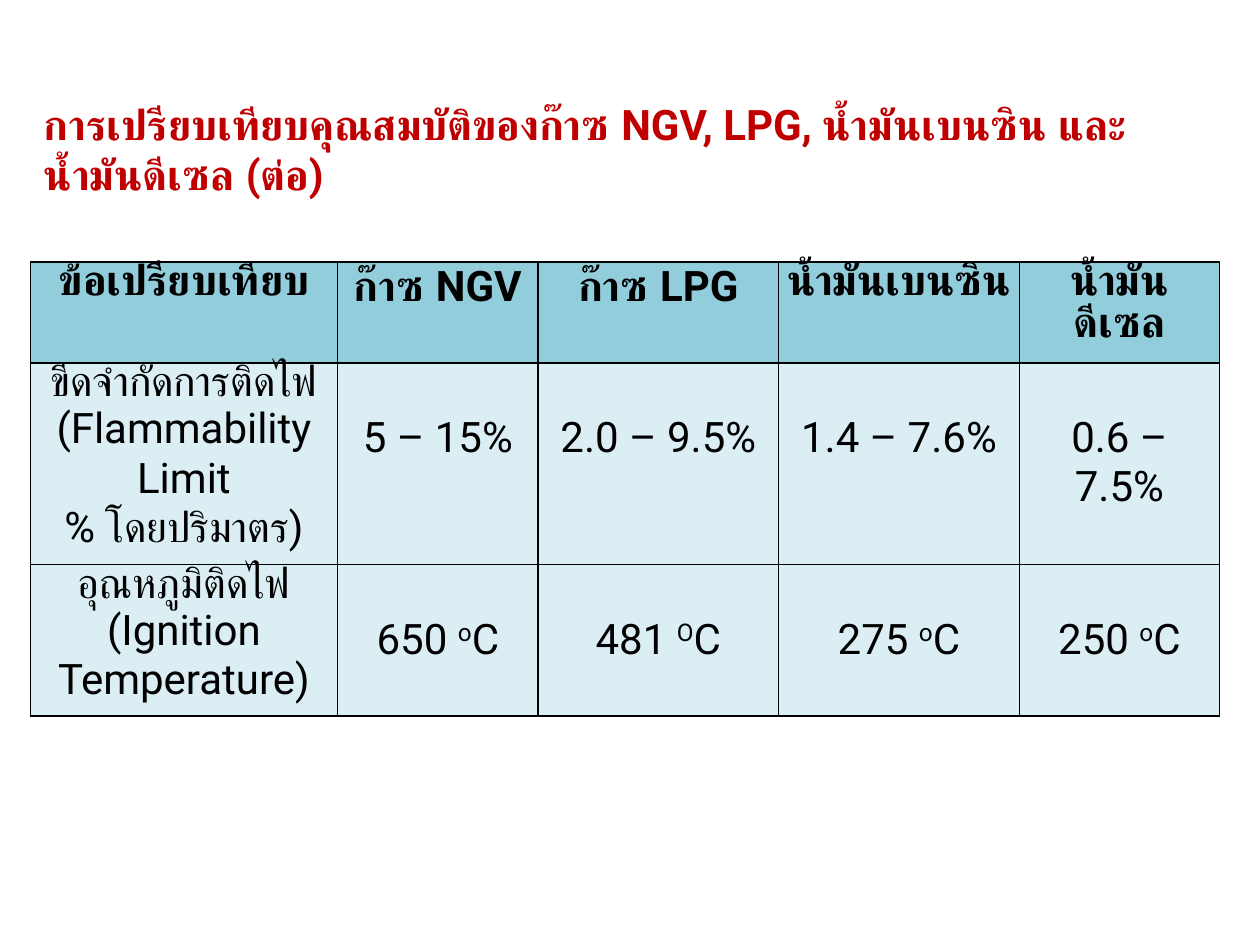
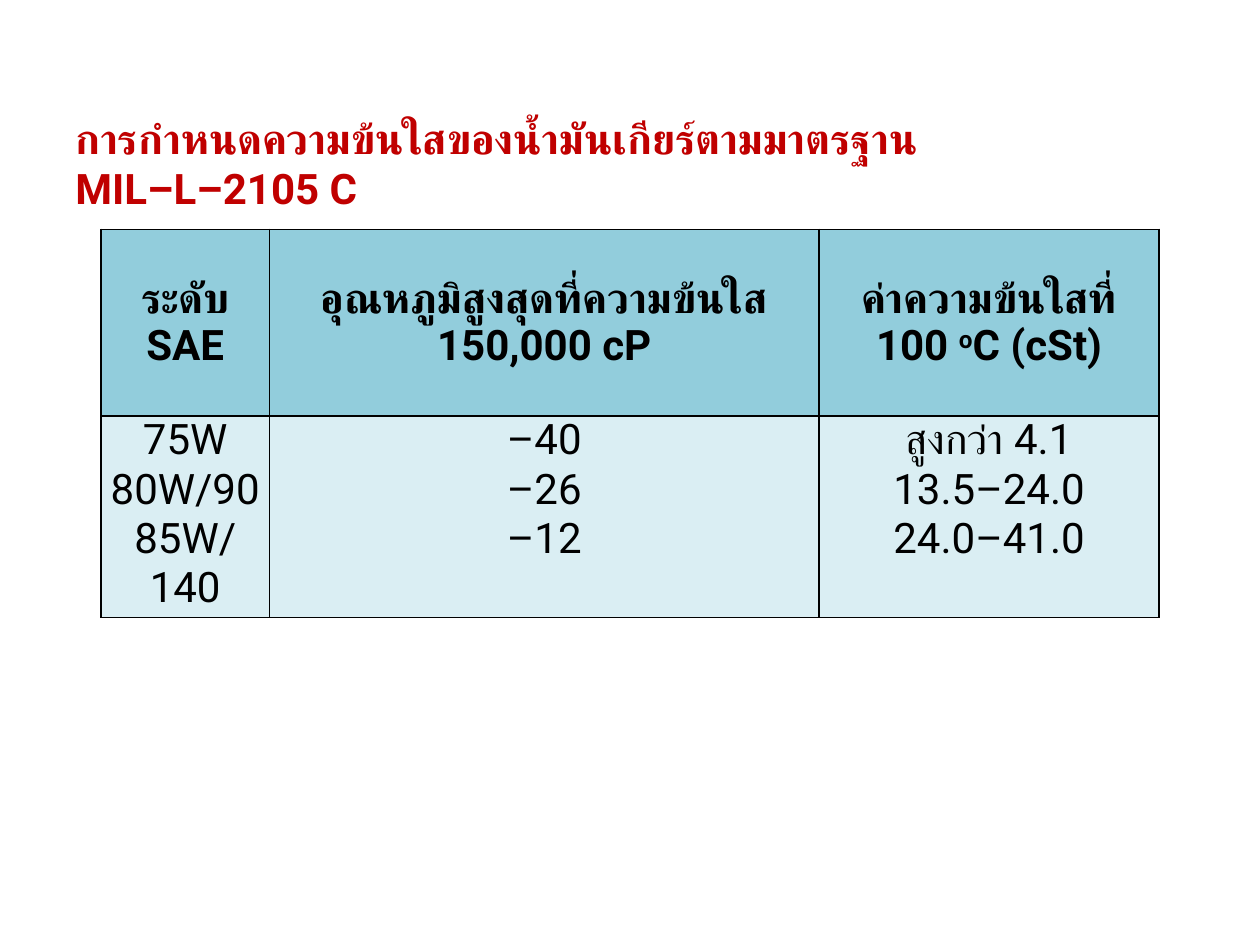
"""Build two slides of tables comparing fuel properties and gear oil viscosity grades."""
from dataclasses import dataclass

from lxml.etree import SubElement
from pptx import Presentation
from pptx.dml.color import RGBColor
from pptx.enum.text import MSO_ANCHOR as Anchor, PP_ALIGN as Align
from pptx.oxml.ns import qn
from pptx.slide import Slide
from pptx.table import _Cell as Cell
from pptx.text.text import _Paragraph as Paragraph
from pptx.util import Emu, Inches, Pt

SLIDE_WIDTH, SLIDE_HEIGHT = Inches(10), Inches(7.5)
GRID_COLUMNS, GRID_ROWS = 100, 75
LINE_ROWS = 4
FONT, FONT_SIZE = "Roboto", 24
TITLE_COLOR, TEXT_COLOR = "C00000", "000000"
HEADER_FILL, BODY_FILL = "92CDDC", "DAEEF3"
SUPERSCRIPT_MARK = "^"


@dataclass(frozen=True)
class Title:
    """Heading text with its place in grid columns and rows."""
    text: str
    left: float
    top: float
    width: float
    height: float


@dataclass(frozen=True)
class TableRow:
    """Cell texts, height in text lines, and how many cells at the left start on the first line."""
    texts: tuple[str, ...]
    lines: float
    unshifted: int


@dataclass(frozen=True)
class TablePage:
    """A heading above a table placed on the grid."""
    title: Title
    left: float
    top: float
    columns: tuple[float, ...]
    rows: tuple[TableRow, ...]


PAGES = (
    TablePage(
        Title("การเปรียบเทียบคุณสมบัติของก๊าซ NGV, LPG, น้ำมันเบนซิน และน้ำมันดีเซล (ต่อ)",
              2.5, 7.3, 94.3, 9.1),
        2.4, 20.8, (24.4, 15.9, 19.1, 19.1, 15.9),
        (
            TableRow(("ข้อเปรียบเทียบ", "ก๊าซ NGV", "ก๊าซ LPG", "น้ำมันเบนซิน", "น้ำมันดีเซล"), 2, 5),
            TableRow(("ขีดจำกัดการติดไฟ\n(Flammability Limit\n% โดยปริมาตร)",
                      "5 – 15%", "2.0 – 9.5%", "1.4 – 7.6%", "0.6 – 7.5%"), 4, 1),
            TableRow(("อุณหภูมิติดไฟ\n(Ignition Temperature)",
                      "650 ^o^C", "481 ^O^C", "275 ^o^C", "250 ^o^C"), 3, 1),
        ),
    ),
    TablePage(
        Title("การกำหนดความข้นใสของน้ำมันเกียร์ตามมาตรฐาน MIL–L–2105 C", 5, 8.4, 69.1, 9.1),
        8, 18.2, (13.4, 43.6, 27),
        (
            TableRow(("ระดับ SAE", "อุณหภูมิสูงสุดที่ความข้นใส 150,000 cP",
                      "ค่าความข้นใสที่ 100 ^o^C (cSt)"), 3.7, 0),
            TableRow(("75W\n80W/90\n85W/140", "–40\n–26\n–12",
                      "สูงกว่า 4.1\n13.5–24.0\n24.0–41.0"), 4, 3),
        ),
    ),
)


def across(columns: float) -> Emu:
    """Return the width of a number of grid columns."""
    return Emu(round(SLIDE_WIDTH * columns / GRID_COLUMNS))


def down(rows: float) -> Emu:
    """Return the height of a number of grid rows."""
    return Emu(round(SLIDE_HEIGHT * rows / GRID_ROWS))


def color(value: str) -> RGBColor:
    """Return the colour for a hex string."""
    return RGBColor.from_string(value)


def write_paragraph(paragraph: Paragraph, text: str, hex_color: str, bold: bool) -> None:
    """Write text in the shared font, raising the parts between superscript marks."""
    for index, part in enumerate(text.split(SUPERSCRIPT_MARK)):
        run = paragraph.add_run()
        run.text = part
        run.font.name = FONT
        run.font.size = Pt(FONT_SIZE)
        run.font.bold = bold
        run.font.color.rgb = color(hex_color)
        if index % 2:
            run._r.get_or_add_rPr().set("baseline", "30000")


def add_borders(cell: Cell) -> None:
    """Draw a thin solid line on every side of a cell."""
    properties = cell._tc.get_or_add_tcPr()
    for position, side in enumerate(("a:lnL", "a:lnR", "a:lnT", "a:lnB")):
        line = SubElement(properties, qn(side), w=str(Pt(1)))
        fill = SubElement(line, qn("a:solidFill"))
        SubElement(fill, qn("a:srgbClr"), val=TEXT_COLOR)
        properties.insert(position, line)


def fill_cell(cell: Cell, text: str, is_header: bool, shifted: bool) -> None:
    """Format one table cell and write its centred lines."""
    cell.fill.solid()
    cell.fill.fore_color.rgb = color(HEADER_FILL if is_header else BODY_FILL)
    add_borders(cell)
    cell.margin_left = cell.margin_right = across(0.6)
    cell.margin_top = down(LINE_ROWS if shifted else 0)
    cell.margin_bottom = 0
    cell.vertical_anchor = Anchor.TOP
    for index, line in enumerate(text.split("\n")):
        frame = cell.text_frame
        paragraph = frame.add_paragraph() if index else frame.paragraphs[0]
        paragraph.alignment = Align.CENTER
        write_paragraph(paragraph, line, TEXT_COLOR, is_header)


def add_title(slide: Slide, title: Title) -> None:
    """Add the red heading."""
    box = slide.shapes.add_textbox(across(title.left), down(title.top),
                                   across(title.width), down(title.height))
    box.text_frame.word_wrap = True
    write_paragraph(box.text_frame.paragraphs[0], title.text, TITLE_COLOR, True)


def add_table(slide: Slide, page: TablePage) -> None:
    """Add the bordered table with a darker header row."""
    height = sum(row.lines for row in page.rows) * LINE_ROWS
    table = slide.shapes.add_table(len(page.rows), len(page.columns), across(page.left),
                                   down(page.top), across(sum(page.columns)), down(height)).table
    table.first_row = table.horz_banding = False
    for column, width in zip(table.columns, page.columns):
        column.width = across(width)
    for row_index, row in enumerate(page.rows):
        table.rows[row_index].height = down(row.lines * LINE_ROWS)
        for column_index, text in enumerate(row.texts):
            fill_cell(table.cell(row_index, column_index), text,
                      row_index == 0, column_index >= row.unshifted)


def main() -> None:
    """Build and save the presentation."""
    presentation = Presentation()
    presentation.slide_width, presentation.slide_height = SLIDE_WIDTH, SLIDE_HEIGHT
    for page in PAGES:
        slide = presentation.slides.add_slide(presentation.slide_layouts[6])
        add_title(slide, page.title)
        add_table(slide, page)
    presentation.save("out.pptx")


if __name__ == "__main__":
    main()
